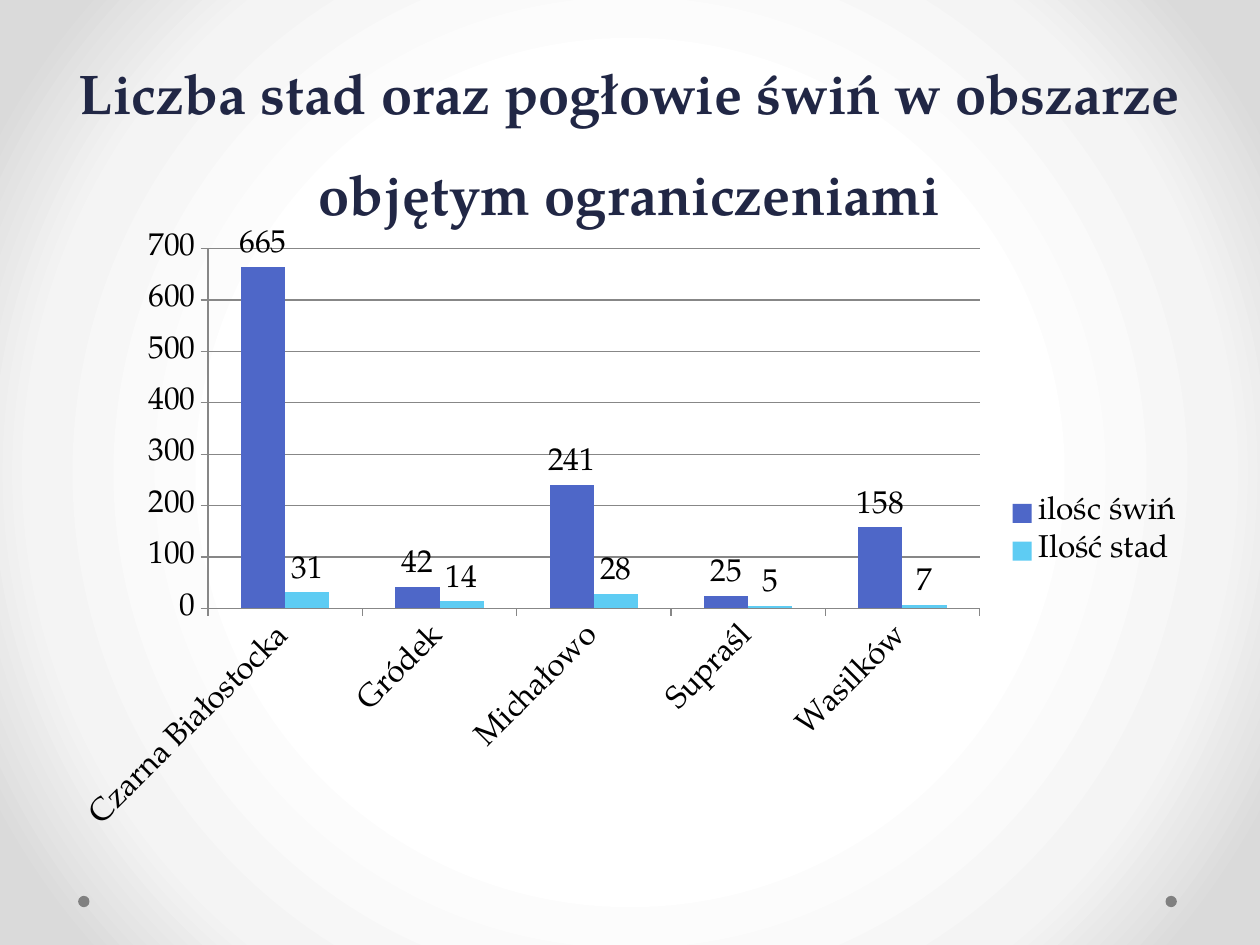
from lxml import etree
from pptx import Presentation
from pptx.chart.data import CategoryChartData
from pptx.dml.color import RGBColor
from pptx.enum.chart import XL_CHART_TYPE, XL_LABEL_POSITION, XL_LEGEND_POSITION, XL_TICK_MARK
from pptx.enum.shapes import MSO_SHAPE
from pptx.enum.text import MSO_ANCHOR, PP_ALIGN
from pptx.oxml.ns import qn
from pptx.util import Inches, Pt

COLUMNS = XL_CHART_TYPE.COLUMN_CLUSTERED
OUTSIDE_END = XL_LABEL_POSITION.OUTSIDE_END
RIGHT = XL_LEGEND_POSITION.RIGHT
TICK_OUT = XL_TICK_MARK.OUTSIDE
OVAL = MSO_SHAPE.OVAL
BOTTOM = MSO_ANCHOR.BOTTOM
CENTER = PP_ALIGN.CENTER
FONT = "TeX Gyre Pagella"


def color(value):
    return RGBColor.from_string(value)


prs = Presentation()
prs.slide_width, prs.slide_height = Inches(10), Inches(7.5)
s = prs.slides.add_slide(prs.slide_layouts[6])

# Background: circular gradient from the centre
s.background.fill.gradient()
grad = s.element.find(".//" + qn("a:gradFill"))
for child in list(grad):
    grad.remove(child)
stops = etree.SubElement(grad, qn("a:gsLst"))
for pos, value in [(50, "FFFFFF"), (76, "F4F4F4"), (92, "DADADA")]:
    stop = etree.SubElement(stops, qn("a:gs"), pos=str(pos * 1000))
    etree.SubElement(stop, qn("a:srgbClr"), val=value)
path = etree.SubElement(grad, qn("a:path"), path="circle")
etree.SubElement(path, qn("a:fillToRect"), l="50000", t="50000", r="50000", b="50000")

# Corner dots
for left in (9.25, 0.62):
    sp = s.shapes.add_shape(OVAL, Inches(left), Inches(7.11), Inches(0.09), Inches(0.09))
    sp.shadow.inherit = False
    sp.fill.solid()
    sp.fill.fore_color.rgb = color("808080")
    sp.line.fill.background()

# Title
tf = s.shapes.add_textbox(Inches(0.5), Inches(0.29), Inches(9), Inches(1.56)).text_frame
tf.word_wrap = True
tf.vertical_anchor = BOTTOM
p = tf.paragraphs[0]
p.alignment = CENTER
p.line_spacing = Pt(58)
r = p.add_run()
r.text = "Liczba stad oraz pogłowie świń w obszarze objętym ograniczeniami"
r.font.name = FONT
r.font.size = Pt(32)
r.font.bold = True
r.font.color.rgb = color("212745")

# Chart of pigs and herds by municipality
data = CategoryChartData()
data.categories = ["Czarna Białostocka", "Gródek", "Michałowo", "Supraśl", "Wasilków"]
data.add_series("ilośc świń", [665, 42, 241, 25, 158])
data.add_series("Ilość stad", [31, 14, 28, 5, 7])
chart = s.shapes.add_chart(COLUMNS, Inches(0.5), Inches(1.75), Inches(9), Inches(4.95), data).chart
chart.has_title = False
chart.font.name = FONT
chart.font.size = Pt(18)
chart.font.color.rgb = color("000000")
chart.has_legend = True
chart.legend.position = RIGHT
chart.legend.include_in_layout = False

plot = chart.plots[0]
plot.vary_by_categories = False
plot.gap_width = 150
plot.overlap = 0
for series, value in zip(plot.series, ("4E67C8", "5ECCF3")):
    series.format.fill.solid()
    series.format.fill.fore_color.rgb = color(value)
    labels = series.data_labels
    labels.show_value = True
    labels.position = OUTSIDE_END

# Axes and gridlines
chart.value_axis.has_major_gridlines = True
for axis in (chart.category_axis, chart.value_axis):
    axis.major_tick_mark = TICK_OUT
    axis.format.line.color.rgb = color("878787")
gridline = chart.value_axis.major_gridlines.format.line
gridline.color.rgb = color("878787")

prs.save("out.pptx")
